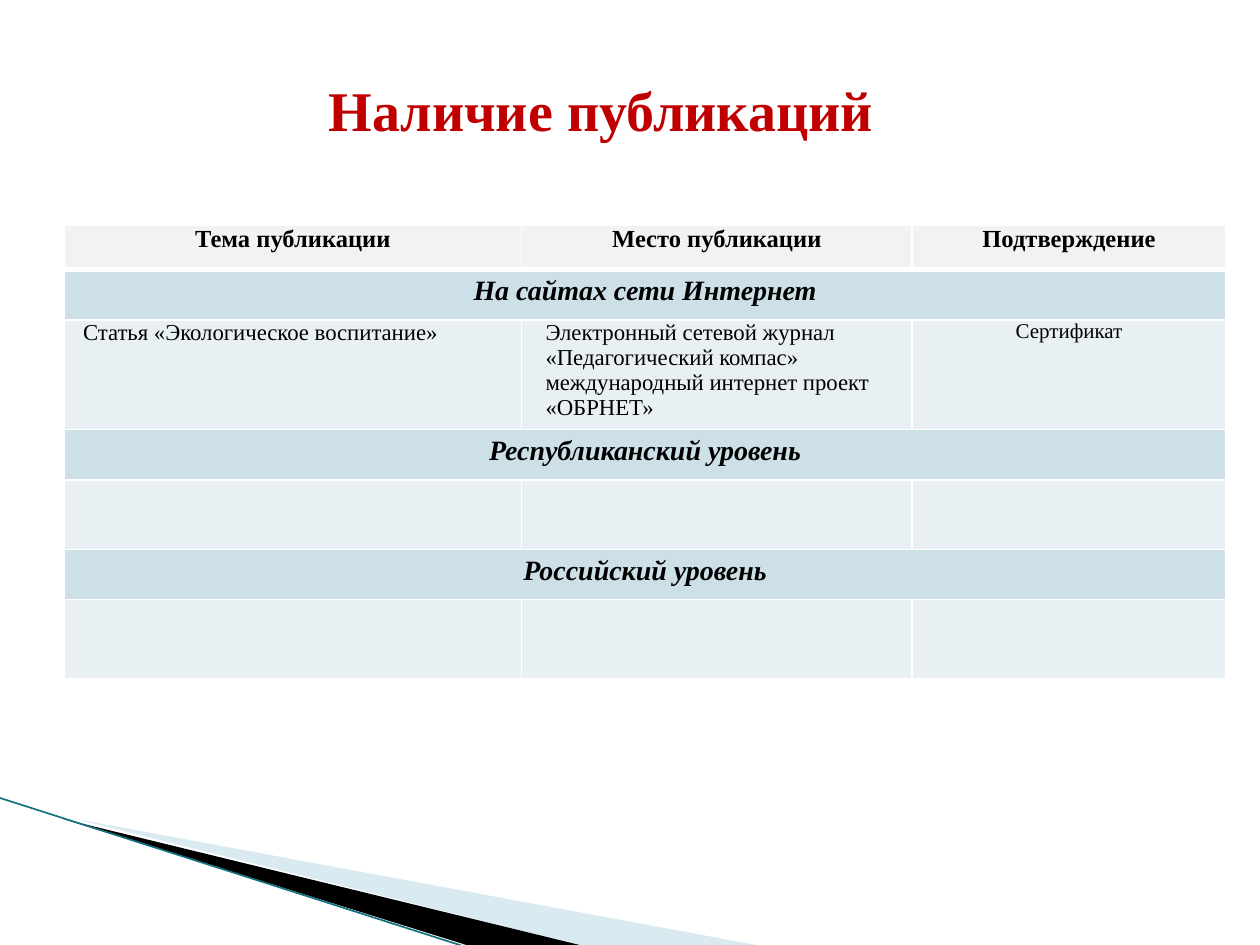
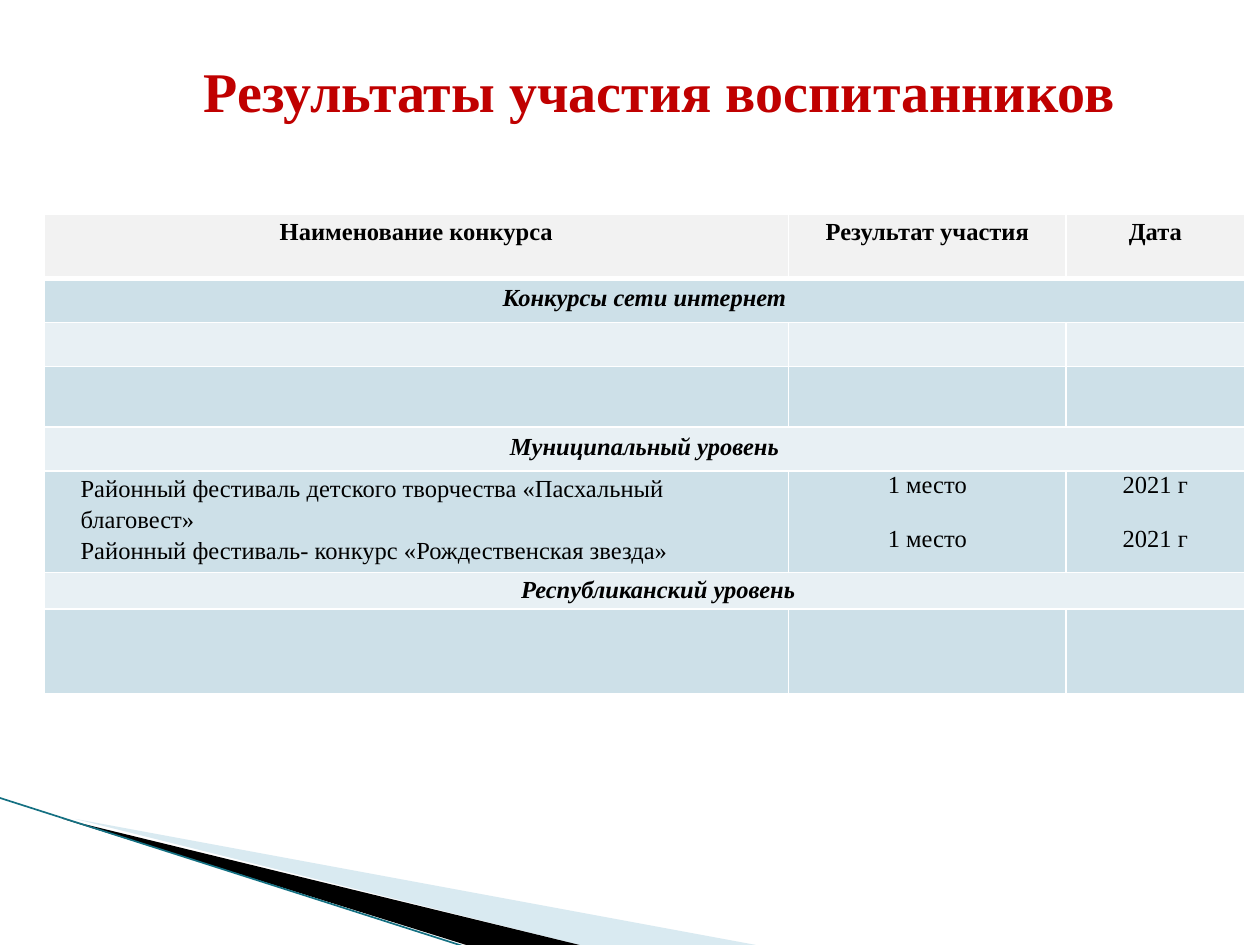
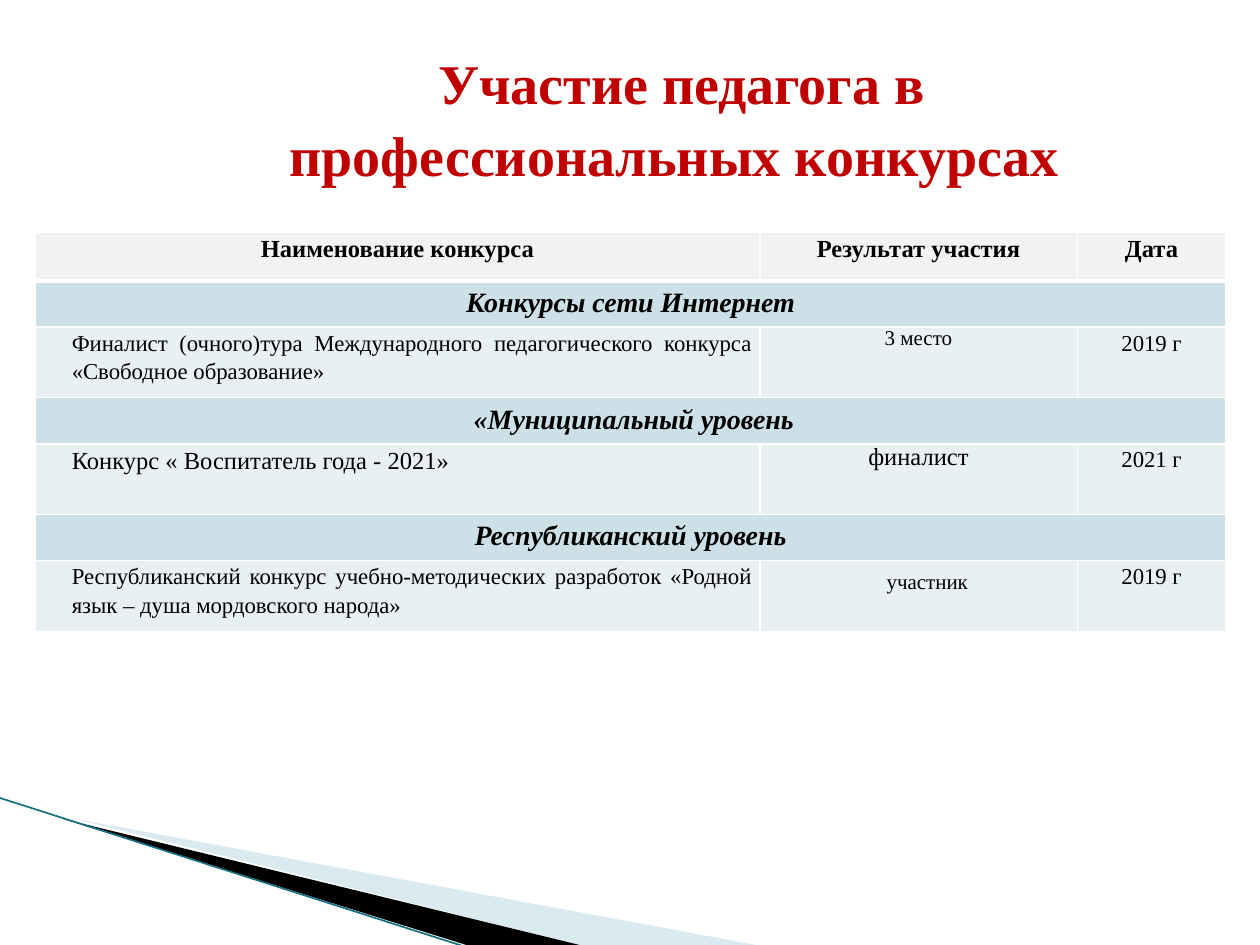
from dataclasses import dataclass

from lxml.etree import SubElement
from pptx import Presentation
from pptx.dml.color import RGBColor
from pptx.enum.shapes import MSO_CONNECTOR as CONN
from pptx.enum.text import PP_ALIGN as AL
from pptx.oxml.ns import qn
from pptx.util import Emu, Inches, Pt

# Slide size and the grid: 100 columns by 75 rows
W, H = Inches(10), Inches(7.5)
COL, ROW = W / 100, H / 75

# Shared look
FONT = "Times New Roman"
RED, BLACK, WHITE = "C00000", "000000", "FFFFFF"
HEAD, DARK, LIGHT = "F2F2F2", "CDE0E8", "E8F0F4"
PALE, TEAL = "A0CBDC", "147082"
TITLE_SIZE, TITLE_LEADING, TITLE_INDENT = 32, 1.08, 1.1


def rgb(code: str) -> RGBColor:
    return RGBColor.from_string(code)


def cols(n: float) -> Emu:
    return Emu(round(n * COL))


def rows(n: float) -> Emu:
    return Emu(round(n * ROW))


@dataclass(frozen=True)
class Title:
    text: str
    box: tuple[float, float, float, float]
    align: AL = AL.CENTER


@dataclass(frozen=True)
class Entry:
    """Text of one table cell; indent and top are in grid units."""
    text: str = ""
    size: float = 14
    bold: bool = False
    italic: bool = False
    align: AL = AL.CENTER
    indent: float = 0
    leading: float = 1
    gap: float = 0
    side: float = 0.7
    top: float = 0


@dataclass(frozen=True)
class Grid:
    left: float
    top: float
    widths: list[float]
    heights: list[float]
    body: list[list[Entry]]


@dataclass(frozen=True)
class Wedge:
    points: list[tuple[float, float]]
    color: str
    opacity: int = 100


WEDGES = [
    Wedge([(5.5, 65.1), (59.5, 75.1), (45.6, 75.1), (5.5, 65)], PALE, 40),
    Wedge([(5.3, 64.9), (45.7, 75.1), (37.2, 75.2), (5.4, 65)], BLACK),
]


# Kinds of cell
def header(text: str, leading: float = 1) -> Entry:
    return Entry(text, bold=True, leading=leading)


def section(text: str, size: float = 16, indent: float = 0) -> list[Entry]:
    return [Entry(text, size, True, True, indent=indent, side=1, top=0.5)]


def contest(text: str, size: float = 14, align: AL = AL.JUSTIFY) -> Entry:
    return Entry(text, size, align=align, indent=2.2, leading=1.15)


def year(text: str) -> Entry:
    return Entry(text, 13, leading=1.15)


EMPTY = [Entry()] * 3
CONTEST_HEAD = [header(t, 1.15) for t in
                ("Наименование конкурса", "Результат участия", "Дата")]

SLIDES = [
    (Title("Наличие публикаций", (24, 5.1, 48, 6.4), AL.LEFT),
     Grid(5.1, 17.9, [36.3, 31, 24.9], [3.5, 4, 8.7, 4, 5.5, 4, 6.3], [
         [header("Тема публикации"), header("Место публикации"), header("Подтверждение")],
         section("На сайтах сети Интернет"),
         [Entry("Статья «Экологическое воспитание»", 13, align=AL.LEFT, indent=0.8),
          Entry("Электронный сетевой журнал «Педагогический компас» "
                "международный интернет проект «ОБРНЕТ»", 13, align=AL.LEFT, indent=1.2),
          Entry("Сертификат", 12)],
         section("Республиканский уровень"),
         EMPTY,
         section("Российский уровень"),
         EMPTY,
     ])),
    (Title("Результаты участия воспитанников", (7.5, 3.6, 88.6, 14.5)),
     Grid(3.5, 17, [59.1, 22, 14.2], [5.1, 3.5, 3.5, 4.8, 3.5, 7.4, 2.9, 6.7], [
         CONTEST_HEAD,
         section("Конкурсы сети интернет", 14),
         EMPTY,
         EMPTY,
         section("Муниципальный уровень", 14),
         [contest("Районный фестиваль детского творчества «Пасхальный благовест»\n"
                  "Районный фестиваль- конкурс «Рождественская звезда»", align=AL.LEFT),
          Entry("1 место\n1 место", gap=15.5),
          Entry("2021 г\n2021 г", gap=15.5)],
         [Entry("Республиканский уровень", 14, True, True, indent=2.2, leading=1.15)],
         EMPTY,
     ])),
    (Title("Участие педагога в профессиональных конкурсах", (13, 2.9, 81.1, 10.6)),
     Grid(2.8, 18.4, [57.5, 25.2, 11.8], [3.9, 3.5, 5.6, 3.5, 5.6, 3.5, 5.6], [
         CONTEST_HEAD,
         section("Конкурсы сети Интернет"),
         [contest("Финалист (очного)тура Международного педагогического конкурса "
                  "«Свободное образование»", 13),
          Entry("3 место", 12), year("2019 г")],
         section("«Муниципальный уровень", indent=0.5),
         [contest("Конкурс « Воспитатель года - 2021»"), Entry("финалист"), year("2021 г")],
         section("Республиканский уровень"),
         [contest("Республиканский конкурс учебно-методических разработок "
                  "«Родной язык – душа мордовского народа»", 13),
          Entry("участник", 12, indent=1.4, top=0.8), year("2019 г")],
     ])),
]


def style(p, size: float, color: str, bold: bool, italic: bool = False) -> None:
    f = p.font
    f.name, f.size, f.bold, f.italic = FONT, Pt(size), bold, italic
    f.color.rgb = rgb(color)


def add_corner(slide) -> None:
    """Wedges and the thin line in the bottom left corner."""
    for w in WEDGES:
        fb = slide.shapes.build_freeform(*w.points[0], scale=COL)
        fb.add_line_segments(w.points[1:], close=True)
        sp = fb.convert_to_shape()
        sp.shadow.inherit = False
        sp.fill.solid()
        sp.fill.fore_color.rgb = rgb(w.color)
        sp.line.fill.background()
        if w.opacity < 100:
            clr = sp.fill._xPr.find(".//" + qn("a:srgbClr"))
            SubElement(clr, qn("a:alpha"), val=str(w.opacity * 1000))
    line = slide.shapes.add_connector(CONN.STRAIGHT, cols(-0.1), rows(63.3),
                                      cols(37.1), rows(75.2))
    line.line.color.rgb = rgb(TEAL)
    line.line.width = Pt(0.95)
    SubElement(line._element.spPr, qn("a:effectLst"))


def add_title(slide, title: Title) -> None:
    x, y, w, h = title.box
    tf = slide.shapes.add_textbox(cols(x), rows(y), cols(w), rows(h)).text_frame
    tf.word_wrap = True
    p = tf.paragraphs[0]
    p.text, p.alignment, p.line_spacing = title.text, title.align, TITLE_LEADING
    p._p.get_or_add_pPr().set("indent", str(cols(TITLE_INDENT)))
    style(p, TITLE_SIZE, RED, True)


def set_borders(cell, top: float, bottom: float) -> None:
    tc_pr = cell._tc.get_or_add_tcPr()
    for side, width in (("L", 1), ("R", 1), ("T", top), ("B", bottom)):
        ln = SubElement(tc_pr, qn(f"a:ln{side}"), w=str(Pt(width)))
        fill = SubElement(ln, qn("a:solidFill"))
        SubElement(fill, qn("a:srgbClr"), val=WHITE)


def fill_cell(cell, entry: Entry) -> None:
    cell.margin_left = cell.margin_right = cols(entry.side)
    cell.margin_top = rows(entry.top)
    cell.margin_bottom = rows(min(entry.top, 0.5))
    tf = cell.text_frame
    tf.text = entry.text
    for i, p in enumerate(tf.paragraphs):
        p.alignment, p.line_spacing = entry.align, entry.leading
        if entry.indent:
            p._p.get_or_add_pPr().set("marL", str(cols(entry.indent)))
        if i and entry.gap:
            p.space_before = Pt(entry.gap)
        style(p, entry.size, BLACK, entry.bold, entry.italic)


def add_grid(slide, grid: Grid) -> None:
    table = slide.shapes.add_table(
        len(grid.heights), len(grid.widths), cols(grid.left), rows(grid.top),
        cols(sum(grid.widths)), rows(sum(grid.heights))).table
    table.first_row = table.horz_banding = False
    for column, width in zip(table.columns, grid.widths):
        column.width = cols(width)
    for r, (height, entries) in enumerate(zip(grid.heights, grid.body)):
        table.rows[r].height = rows(height)
        color = HEAD if r == 0 else DARK if r % 2 else LIGHT
        for c in range(len(grid.widths)):
            cell = table.cell(r, c)
            set_borders(cell, 3 if r == 1 else 1, 3 if r == 0 else 1)
            cell.fill.solid()
            cell.fill.fore_color.rgb = rgb(color)
        for c, entry in enumerate(entries):
            fill_cell(table.cell(r, c), entry)
        # A single entry spans the whole row
        if len(entries) == 1:
            table.cell(r, 0).merge(table.cell(r, len(grid.widths) - 1))


def main() -> None:
    prs = Presentation()
    prs.slide_width, prs.slide_height = W, H
    for title, grid in SLIDES:
        slide = prs.slides.add_slide(prs.slide_layouts[6])
        add_corner(slide)
        add_title(slide, title)
        add_grid(slide, grid)
    prs.save("out.pptx")


if __name__ == "__main__":
    main()
